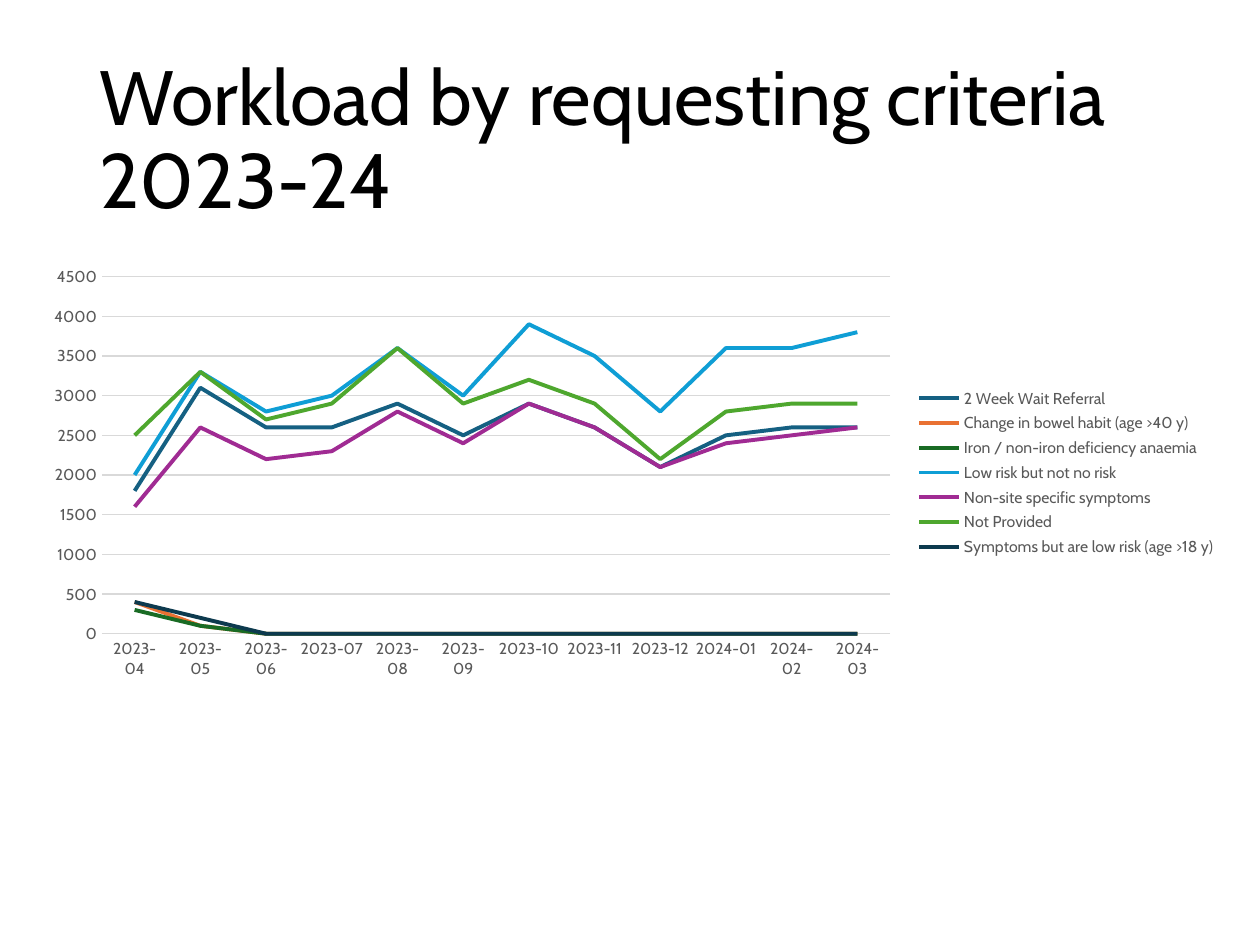
from pptx import Presentation
from pptx.chart.data import CategoryChartData
from pptx.dml.color import RGBColor
from pptx.enum.chart import XL_CHART_TYPE, XL_LEGEND_POSITION, XL_MARKER_STYLE, XL_TICK_MARK
from pptx.enum.text import MSO_ANCHOR, MSO_AUTO_SIZE, PP_ALIGN
from pptx.util import Inches, Pt

LINE = XL_CHART_TYPE.LINE
RIGHT = XL_LEGEND_POSITION.RIGHT
NO_MARK = XL_MARKER_STYLE.NONE
NO_TICK = XL_TICK_MARK.NONE
MIDDLE = MSO_ANCHOR.MIDDLE
NO_FIT = MSO_AUTO_SIZE.NONE
LEFT = PP_ALIGN.LEFT

FACE = "Cabin"
COLORS = {
    "title": "000000", "label": "595959", "grid": "D9D9D9",
    "blue": "156082", "orange": "E97132", "forest": "196B24", "sky": "0F9ED5",
    "purple": "A02B93", "green": "4EA72E", "navy": "0D3A4E",
}


def color(name):
    return RGBColor.from_string(COLORS[name])


def write(frame, text, size=18, tint="title", align=LEFT, spacing=1.0):
    frame.text = text
    para = frame.paragraphs[0]
    para.alignment = align
    para.line_spacing = spacing
    font = para.runs[0].font
    font.name, font.size = FACE, Pt(size)
    font.color.rgb = color(tint)


prs = Presentation()
prs.slide_width, prs.slide_height = Inches(10), Inches(7.5)
slide = prs.slides.add_slide(prs.slide_layouts[5])

# Title
title = slide.shapes.title
title.left, title.top = Inches(0.69), Inches(0.4)
title.width, title.height = Inches(8.62), Inches(1.45)
frame = title.text_frame
frame.word_wrap = True
frame.auto_size = NO_FIT
frame.vertical_anchor = MIDDLE
write(frame, "Workload by requesting criteria 2023-24", size=44, spacing=0.9)

# Monthly requests by criterion
months = [f"2023-{m:02}" for m in range(4, 13)] + [f"2024-{m:02}" for m in range(1, 4)]
rows = [
    ("2 Week Wait Referral", "blue",
     [1800, 3100, 2600, 2600, 2900, 2500, 2900, 2600, 2100, 2500, 2600, 2600]),
    ("Change in bowel habit (age >40 y)", "orange", [400, 100] + [0] * 10),
    ("Iron / non-iron deficiency anaemia", "forest", [300, 100] + [0] * 10),
    ("Low risk but not no risk", "sky",
     [2000, 3300, 2800, 3000, 3600, 3000, 3900, 3500, 2800, 3600, 3600, 3800]),
    ("Non-site specific symptoms", "purple",
     [1600, 2600, 2200, 2300, 2800, 2400, 2900, 2600, 2100, 2400, 2500, 2600]),
    ("Not Provided", "green",
     [2500, 3300, 2700, 2900, 3600, 2900, 3200, 2900, 2200, 2800, 2900, 2900]),
    ("Symptoms but are low risk (age >18 y)", "navy", [400, 200] + [0] * 10),
]
data = CategoryChartData()
data.categories = months
for name, tint, values in rows:
    data.add_series(name, values)

chart = slide.shapes.add_chart(
    LINE, Inches(0.24), Inches(2.05), Inches(9.51), Inches(3.4), data).chart
chart.has_title = False
chart.font.name, chart.font.size = FACE, Pt(10)

# Lines
for series, (name, tint, values) in zip(chart.plots[0].series, rows):
    series.smooth = False
    series.marker.style = NO_MARK
    series.format.line.color.rgb = color(tint)
    series.format.line.width = Pt(2.25)

# Legend
chart.has_legend = True
legend = chart.legend
legend.position = RIGHT
legend.include_in_layout = False

# Axes
across, up = chart.category_axis, chart.value_axis
for axis in (across, up):
    axis.major_tick_mark = axis.minor_tick_mark = NO_TICK
up.minimum_scale, up.maximum_scale, up.major_unit = 0, 4500, 500
up.has_major_gridlines = True
up.format.line.fill.background()
for rule in (across.format.line, up.major_gridlines.format.line):
    rule.color.rgb = color("grid")
    rule.width = Pt(0.75)
for font in (legend.font, across.tick_labels.font, up.tick_labels.font):
    font.name, font.size = FACE, Pt(9)
    font.color.rgb = color("label")

prs.save("out.pptx")
